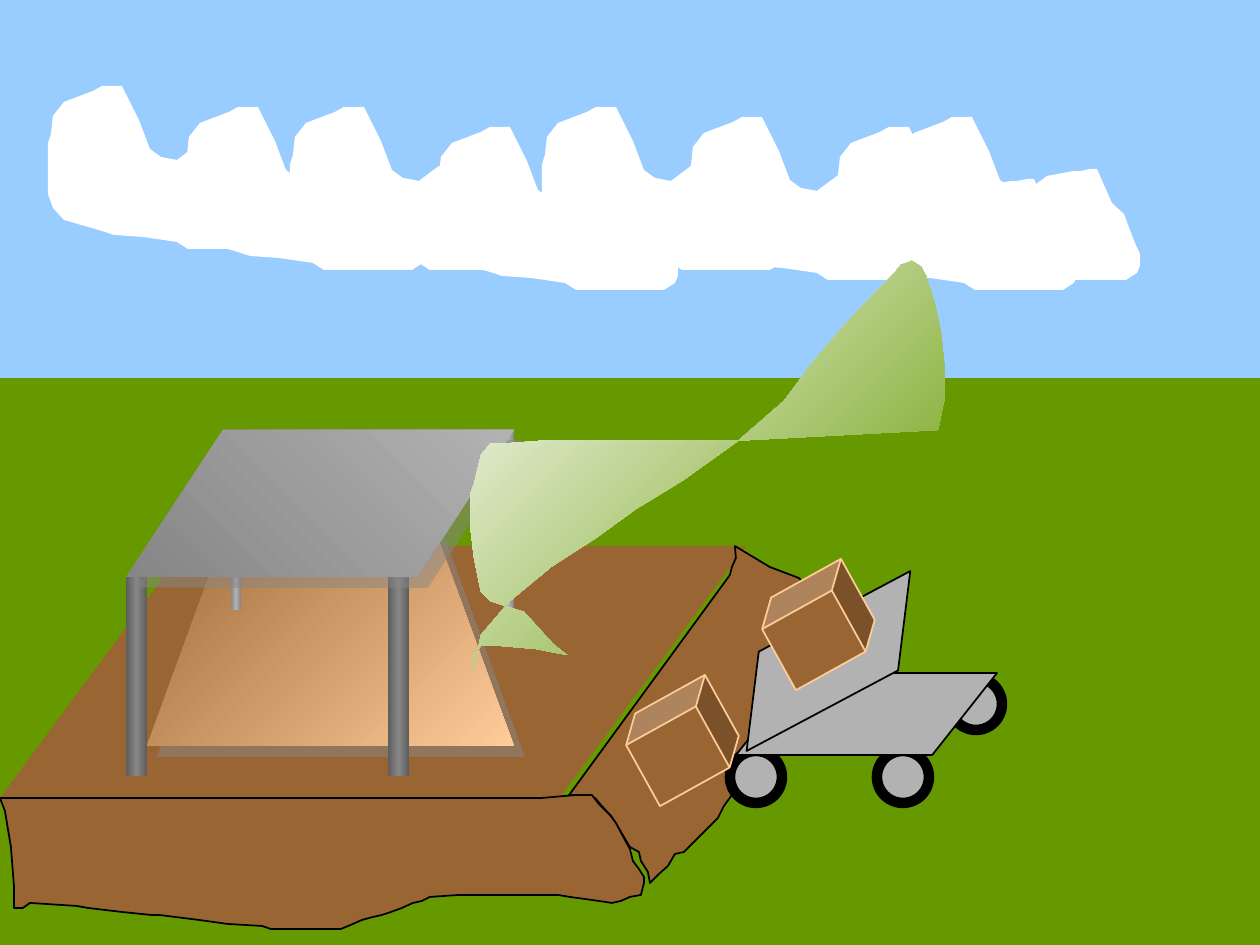
from lxml import etree
from pptx import Presentation
from pptx import util as u
from pptx.dml.color import RGBColor
from pptx.enum import shapes
from pptx.oxml import ns

EMU_PER_PX = u.Inches(1) / 126
PRESET = shapes.MSO_SHAPE


def px(length):
    return u.Emu(round(length * EMU_PER_PX))


def rgb(colour):
    return RGBColor.from_string(colour)


class Scene:
    soil, peach, steel, grass = "996633", "FFCC99", "B2B2B2", "669900"
    shade, dark, black, white = "868686", "5E5E5E", "000000", "FFFFFF"
    sky = "99CCFF"

    def __init__(self, slide):
        self.slide = slide
        self.container = slide.shapes

    def background(self, colour):
        fill = self.slide.background.fill
        fill.solid()
        fill.fore_color.rgb = rgb(colour)

    def group(self):
        self.container = self.slide.shapes.add_group_shape().shapes

    def ungroup(self):
        self.container = self.slide.shapes

    def preset(self, kind, box, fill, adjustment=None, rotation=0, **style):
        shape = self.container.add_shape(kind, *map(px, box))
        if adjustment is not None:
            shape.adjustments[0] = adjustment
        shape.rotation = rotation
        return self.paint(shape, fill, **style)

    def outline(self, points, fill, origin=(0, 0), **style):
        left, top = origin
        moved = [(left + x, top + y) for x, y in points]
        builder = self.container.build_freeform(*moved[0], scale=EMU_PER_PX)
        builder.add_line_segments(moved[1:], close=True)
        return self.paint(builder.convert_to_shape(), fill, **style)

    def paint(self, shape, fill, angle=0, line=None, width=1, shadow=False):
        shape.shadow.inherit = False
        if isinstance(fill, str):
            shape.fill.solid()
            shape.fill.fore_color.rgb = rgb(fill)
        else:
            self.gradient(shape, fill, angle)
        if line:
            shape.line.color.rgb = rgb(line)
            shape.line.width = u.Pt(width)
        else:
            shape.line.fill.background()
        if shadow:
            self.cast_shadow(shape)
        return shape

    def gradient(self, shape, colours, angle):
        shape.fill.gradient()
        shape.fill.gradient_angle = -angle % 360
        stops = shape._element.spPr.find(".//" + ns.qn("a:gsLst"))
        for stop in list(stops):
            stops.remove(stop)
        for index, colour in enumerate(colours):
            position = str(100000 * index // (len(colours) - 1))
            stop = etree.SubElement(stops, ns.qn("a:gs"), pos=position)
            etree.SubElement(stop, ns.qn("a:srgbClr"), val=colour)

    def cast_shadow(self, shape):
        effects = shape._element.spPr.find(ns.qn("a:effectLst"))
        shadow = etree.SubElement(
            effects, ns.qn("a:outerShdw"), dist=str(u.Pt(8.5)),
            dir="2700000", algn="ctr", rotWithShape="0")
        colour = etree.SubElement(shadow, ns.qn("a:srgbClr"), val=self.shade)
        etree.SubElement(colour, ns.qn("a:alpha"), val="50000")


CLOUD = [
    (5, 30), (16, 16), (45, 5), (54, 0), (74, 0), (91, 34), (102, 63),
    (113, 71), (129, 74), (137, 68), (149, 59), (176, 54), (183, 54),
    (192, 52), (199, 52), (214, 86), (226, 97), (237, 126), (242, 137),
    (242, 149), (239, 156), (228, 163), (140, 163), (129, 156), (95, 151),
    (66, 149), (54, 145), (16, 134), (5, 122), (0, 108), (0, 57), (3, 48),
]
CLOUD_ORIGINS = [(48, 86), (184, 107), (290, 107), (436, 127),
                 (542, 107), (688, 117), (835, 127), (898, 117)]
FLOOR = [(147, 746), (239, 494), (422, 494), (514, 746)]
SOIL_SIDE = [
    (735, 546), (736, 558), (732, 567), (730, 575), (567, 798), (573, 795),
    (590, 795), (596, 799), (601, 805), (612, 817), (621, 832), (630, 847),
    (639, 852), (641, 861), (648, 872), (650, 883), (659, 874), (668, 866),
    (675, 854), (684, 852), (696, 840), (707, 829), (718, 818), (724, 806),
    (732, 795), (738, 789), (745, 780), (752, 769), (756, 757), (761, 750),
    (764, 741), (767, 732), (772, 723), (775, 714), (781, 707), (786, 698),
    (790, 689), (795, 680), (801, 669), (810, 658), (813, 649), (822, 635),
    (822, 606), (810, 590), (799, 578), (770, 567),
]
SOIL_FRONT = [
    (0, 798), (5, 811), (11, 847), (14, 886), (14, 908), (23, 908),
    (30, 903), (77, 906), (88, 908), (122, 912), (151, 915), (159, 915),
    (199, 920), (228, 924), (262, 926), (271, 929), (341, 929), (353, 924),
    (362, 920), (373, 917), (382, 915), (391, 912), (402, 908), (413, 903),
    (422, 901), (430, 897), (459, 895), (558, 895), (570, 897), (599, 901),
    (612, 903), (621, 901), (630, 897), (641, 895), (644, 883), (644, 877),
    (639, 869), (633, 861), (630, 849), (624, 838), (616, 823), (610, 815),
    (599, 804), (592, 795), (576, 795), (542, 798),
]
BREEZE = [
    (473, 672), (481, 635), (510, 601), (551, 567), (596, 538), (636, 509),
    (682, 481), (738, 441), (784, 401), (813, 362), (842, 328), (869, 299),
    (881, 287), (892, 276), (901, 265), (912, 261), (921, 267), (926, 276),
    (935, 304), (941, 333), (944, 362), (944, 401), (938, 430), (732, 441),
    (539, 441), (499, 444), (490, 444), (481, 455), (474, 484), (470, 495),
    (470, 524), (474, 558), (481, 592), (490, 601), (524, 612), (553, 644),
    (567, 655), (536, 649), (501, 646), (481, 646), (474, 655),
]


def draw_shelter(scene):
    scene.group()
    scene.preset(PRESET.PARALLELOGRAM, (0, 546, 746, 252), scene.soil, 0.74)
    scene.outline(FLOOR, [scene.soil, scene.peach], angle=45, shadow=True)
    for left in (126, 388):
        scene.preset(PRESET.RECTANGLE, (left, 577, 21, 199),
                     [scene.dark, scene.shade, scene.dark])
    for left in (231, 504):
        scene.preset(PRESET.RECTANGLE, (left, 431, 10, 179),
                     [scene.shade, scene.steel, scene.shade])
    scene.preset(PRESET.PARALLELOGRAM, (126, 430, 388, 147),
                 [scene.shade, scene.steel], 0.66, angle=315, shadow=True)
    for points in (SOIL_SIDE, SOIL_FRONT):
        scene.outline(points, scene.soil, line=scene.black)
    scene.ungroup()


def draw_cart(scene):
    scene.group()
    for left, top in ((730, 751), (877, 751), (950, 678)):
        scene.preset(PRESET.OVAL, (left, top, 52, 52), scene.steel,
                     line=scene.black, width=6)
    scene.preset(PRESET.PARALLELOGRAM, (736, 673, 261, 82), scene.steel,
                 0.79, line=scene.black)
    scene.preset(PRESET.PARALLELOGRAM, (714, 620, 229, 82), scene.steel,
                 0.7, 332, line=scene.black)
    scene.ungroup()


def main():
    presentation = Presentation()
    presentation.slide_width = px(1260)
    presentation.slide_height = px(945)
    slide = presentation.slides.add_slide(presentation.slide_layouts[6])
    scene = Scene(slide)
    scene.background(scene.black)
    scene.preset(PRESET.RECTANGLE, (0, 378, 1260, 567), scene.grass)
    scene.preset(PRESET.RECTANGLE, (0, 0, 1260, 378), scene.sky)
    for origin in CLOUD_ORIGINS:
        scene.outline(CLOUD, scene.white, origin)
    draw_shelter(scene)
    draw_cart(scene)
    for left, top in ((767, 578), (631, 694)):
        scene.preset(PRESET.CUBE, (left, top, 103, 93), scene.soil,
                     0.25, 331, line=scene.peach)
    scene.outline(BREEZE, [scene.white, scene.grass], angle=45)
    presentation.save("out.pptx")


if __name__ == "__main__":
    main()
